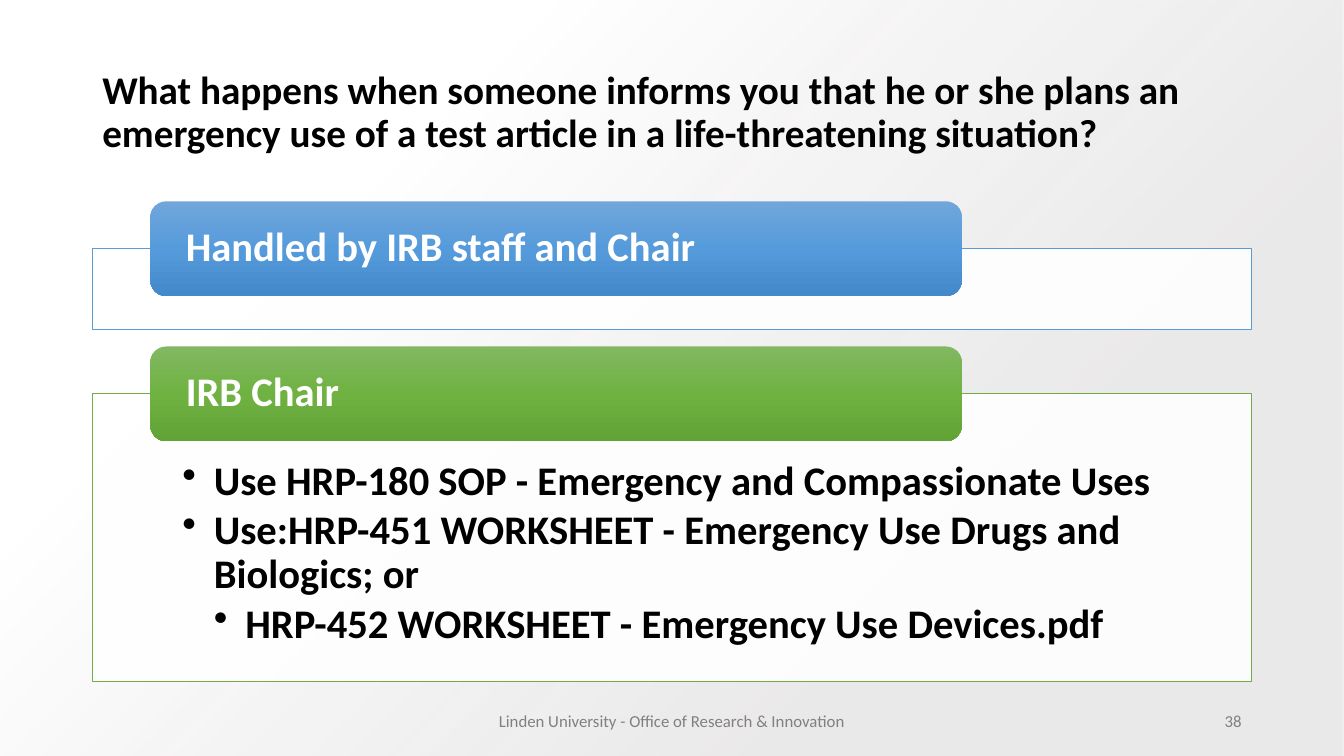
"""Build the slide on emergency use of a test article."""
from pptx import Presentation
from pptx.dml.color import RGBColor
from pptx.enum.shapes import MSO_SHAPE
from pptx.enum.text import MSO_ANCHOR, PP_ALIGN
from pptx.oxml import parse_xml
from pptx.oxml.ns import nsdecls, qn
from pptx.util import Pt

COLORS = {
    "black": "000000", "white": "FFFFFF", "gray": "808080", "mist": "E7E6E6",
    "blue": "5B9BD5", "green": "70AD47",
}


def shade(shape, stops, path):
    """Give a shape a gradient of (percent, color, opacity) stops."""
    marks = "".join(
        f'<a:gs pos="{at * 1000}"><a:srgbClr val="{color}">'
        f'<a:alpha val="{alpha * 1000}"/></a:srgbClr></a:gs>'
        for at, color, alpha in stops)
    shape.fill.background()
    props = shape._element.spPr
    grad = parse_xml(f'<a:gradFill {nsdecls("a")} rotWithShape="1">'
                     f'<a:gsLst>{marks}</a:gsLst>{path}</a:gradFill>')
    props.replace(props.find(qn("a:noFill")), grad)


def write(shape, lines, size, color, bold=True, align=PP_ALIGN.LEFT,
          anchor=MSO_ANCHOR.MIDDLE, space=0.9):
    """Set and format the text of a shape."""
    frame = shape.text_frame
    frame.text = "\n".join(lines)
    frame.word_wrap = True
    frame.vertical_anchor = anchor
    for para in frame.paragraphs:
        para.alignment = align
        para.line_spacing = space
        font = para.runs[0].font
        font.name, font.size, font.bold = "Calibri", Pt(size), bold
        font.color.rgb = RGBColor.from_string(COLORS[color])
    return frame


deck = Presentation()
deck.slide_width, deck.slide_height = Pt(960), Pt(540)
slide = deck.slides.add_slide(deck.slide_layouts[6])
shapes = slide.shapes

back = shapes.add_shape(MSO_SHAPE.RECTANGLE, 0, 0, Pt(960), Pt(540))
back.shadow.inherit = False
back.line.fill.background()
shade(back, [(28, COLORS["mist"], 84), (74, COLORS["white"], 100)],
      '<a:path path="circle"><a:fillToRect l="100000" t="100000"/></a:path>')

title = shapes.add_textbox(Pt(66), Pt(28.75), Pt(828), Pt(104.4))
write(title, ["What happens when someone informs you that he or she plans an "
              "emergency use of a test article in a life-threatening situation?"],
      28, "black")

FOOTERS = [
    (318, 324, "Linden University - Office of Research & Innovation", PP_ALIGN.CENTER),
    (678, 216, "38", PP_ALIGN.RIGHT),
]
for left, width, words, align in FOOTERS:
    foot = shapes.add_textbox(Pt(left), Pt(500.5), Pt(width), Pt(28.75))
    write(foot, [words], 12, "gray", False, align, space=1)

STEPS = [
    (177.6, 57.6, "blue", ["71A6DB", "559BDB", "448ACA"],
     "Handled by IRB staff and Chair", []),
    (281.3, 205.2, "green", ["81B861", "6FB242", "62A336"], "IRB Chair", [
        (1, "Use HRP-180 SOP - Emergency and Compassionate Uses"),
        (1, "Use:HRP-451 WORKSHEET - Emergency Use Drugs and Biologics; or"),
        (2, "HRP-452 WORKSHEET - Emergency Use Devices.pdf"),
    ]),
]
for top, height, hue, tones, head, items in STEPS:
    panel = shapes.add_shape(MSO_SHAPE.RECTANGLE, Pt(66), Pt(top), Pt(828), Pt(height))
    panel.shadow.inherit = False
    panel.fill.solid()
    panel.fill.fore_color.rgb = RGBColor.from_string(COLORS["white"])
    tint = panel._element.spPr.find(qn("a:solidFill"))[0]
    tint.append(parse_xml(f'<a:alpha {nsdecls("a")} val="90000"/>'))
    panel.line.color.rgb = RGBColor.from_string(COLORS[hue])
    panel.line.width = Pt(0.5)
    if items:
        frame = write(panel, [words for level, words in items], 29, "black",
                      anchor=MSO_ANCHOR.TOP)
        frame.margin_left = frame.margin_right = Pt(64.25)
        frame.margin_top, frame.margin_bottom = Pt(47.5), Pt(16.5)
        for para, (level, words) in zip(frame.paragraphs, items):
            para.level = level
            para.space_after = Pt(4)
            props = para._p.get_or_add_pPr()
            props.set("marL", str(Pt(22.5 * level)))
            props.set("indent", str(Pt(-22.5)))
            props.append(parse_xml(f'<a:buChar {nsdecls("a")} char="•"/>'))

    bar = shapes.add_shape(MSO_SHAPE.ROUNDED_RECTANGLE,
                           Pt(107.4), Pt(top - 33.8), Pt(579.6), Pt(67.7))
    bar.shadow.inherit = False
    bar.line.fill.background()
    shade(bar, [(50 * step, tone, 100) for step, tone in enumerate(tones)],
          '<a:lin ang="5400000" scaled="0"/>')
    frame = write(bar, [head], 29, "white")
    frame.margin_left = frame.margin_right = Pt(22)
    frame.margin_top = frame.margin_bottom = 0

deck.save("out.pptx")
